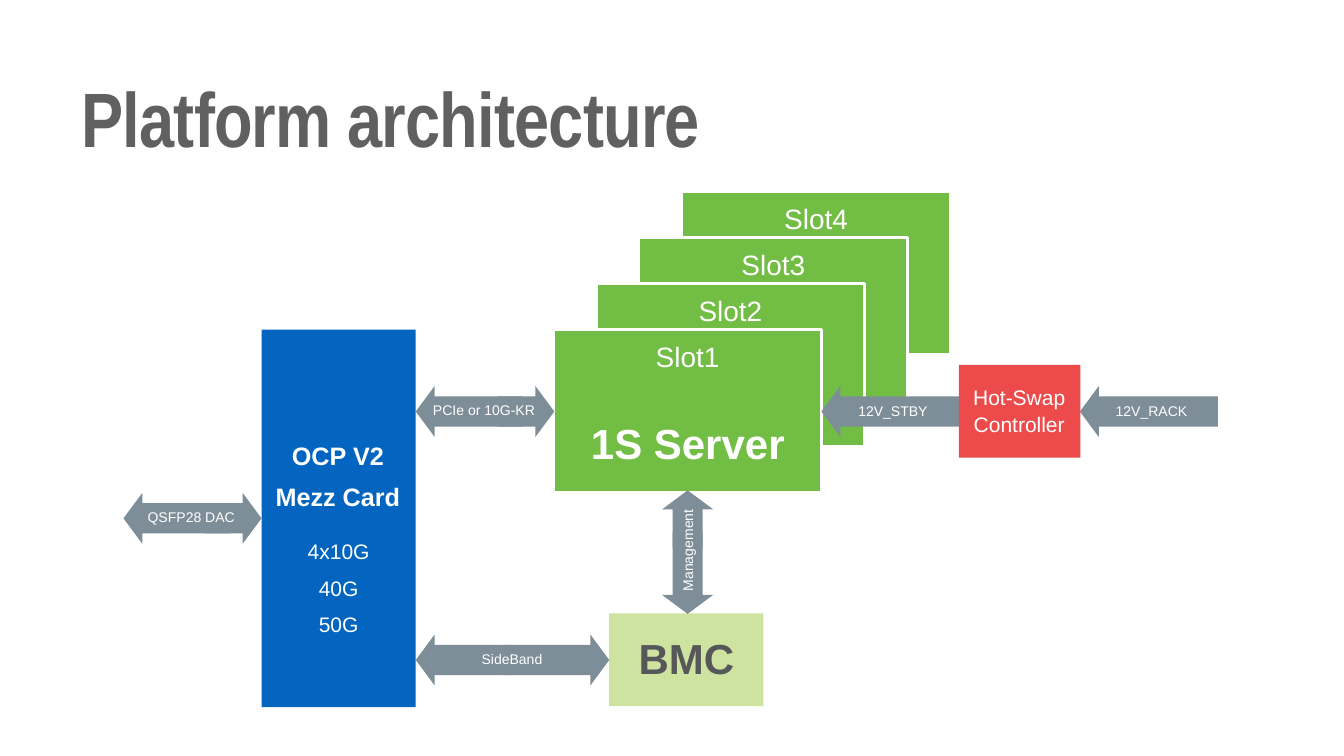
from pptx import Presentation
from pptx.dml.color import RGBColor
from pptx.enum.shapes import MSO_SHAPE as Kind
from pptx.enum.text import MSO_ANCHOR as Anchor, PP_ALIGN as Align
from pptx.util import Inches, Pt

WHITE = RGBColor(0xFF, 0xFF, 0xFF)
DARK = RGBColor(0x60, 0x60, 0x60)
INK = RGBColor(0x55, 0x57, 0x59)
LIME = RGBColor(0xCF, 0xE3, 0xA0)
BLUE = RGBColor(0x03, 0x65, 0xC0)
GREEN = RGBColor(0x72, 0xBD, 0x44)
STEEL = RGBColor(0x7D, 0x8E, 0x98)
RED = RGBColor(0xED, 0x4B, 0x4B)


def add_title(slide, text):
    """Fill and place the title placeholder."""
    title = slide.shapes.title
    title.left, title.top = Inches(1.62), Inches(0.08)
    title.width, title.height = Inches(24.34), Inches(3.16)
    frame = title.text_frame
    frame.text = text
    frame.word_wrap = True
    frame.vertical_anchor = Anchor.BOTTOM
    frame.margin_left = frame.margin_right = 0
    frame.margin_top = frame.margin_bottom = 0
    para = frame.paragraphs[0]
    para.alignment = Align.LEFT
    para.space_after = Pt(6)
    run = para.runs[0]
    run.font.name = "Arial Narrow"
    run.font.size = Pt(110)
    run.font.bold = True
    run.font.color.rgb = DARK
    run._r.get_or_add_rPr().set("spc", "-120")


def add_block(slide, box, fill, kind=Kind.RECTANGLE, edge=None):
    """Add a filled shape, outlined only if an edge colour is given."""
    block = slide.shapes.add_shape(kind, *map(Inches, box))
    block.shadow.inherit = False
    block.fill.solid()
    block.fill.fore_color.rgb = fill
    if edge is None:
        block.line.fill.background()
    else:
        block.line.color.rgb = edge
        block.line.width = Pt(4)
    return block


def add_label(slide, box, text, size, bold=False, color=WHITE, gap=20,
              anchor=Anchor.MIDDLE, turn=0):
    """Add a centred text box with one paragraph per line."""
    label = slide.shapes.add_textbox(*map(Inches, box))
    label.rotation = turn
    frame = label.text_frame
    frame.text = text
    frame.word_wrap = True
    frame.vertical_anchor = anchor
    frame.margin_left = frame.margin_right = Inches(0.08)
    frame.margin_top = frame.margin_bottom = Inches(0.08)
    for i, para in enumerate(frame.paragraphs):
        para.alignment = Align.CENTER
        para.line_spacing = 0.9
        para.space_before = Pt(gap if i else 0)
        for run in para.runs:
            run.font.name = "Arial"
            run.font.size = Pt(size)
            run.font.bold = bold
            run.font.color.rgb = color


def add_arrow(slide, kind, left, top, width, turn=0):
    """Add one bus arrow."""
    arrow = add_block(slide, (left, top, width, 1.01), STEEL, kind)
    arrow.adjustments[0] = 0.593
    arrow.adjustments[1] = 0.371
    arrow.rotation = turn


def add_bus(slide, text, box, right, left, turn=0):
    """Add a labelled bus with a left head and an optional right head."""
    if right:
        add_arrow(slide, Kind.RIGHT_ARROW, *right, turn)
    add_arrow(slide, Kind.LEFT_ARROW, *left, turn)
    add_label(slide, (*box, 0.44), text, 20, turn=turn)


def add_slots(slide):
    """Stack the server slots from back to front."""
    for i in range(3, -1, -1):
        x, y = 10.98 + 0.85 * i, 6.54 - 0.91 * i
        add_block(slide, (x, y, 5.33, 3.23), GREEN, edge=WHITE)
        add_label(slide, (x + 0.85, y + 0.21, 3.63, 0.71), f"Slot{i + 1}", 40)
    add_label(slide, (11.15, 8.36, 5, 0.96), "1S Server", 60, True)


def add_card(slide):
    """Add the network card with its speeds."""
    add_block(slide, (5.19, 6.54, 3.06, 7.49), BLUE)
    add_label(slide, (5.18, 8.8, 3.05, 1.37), "OCP V2\nMezz Card", 36, True)
    add_label(slide, (5.98, 10.66, 1.48, 1.88), "4x10G\n40G\n50G", 30,
              anchor=Anchor.TOP)


def main():
    """Build the slide and save it."""
    deck = Presentation()
    deck.slide_width, deck.slide_height = Inches(26.67), Inches(15)
    slide = deck.slides.add_slide(deck.slide_layouts[5])
    add_title(slide, "Platform architecture")
    add_block(slide, (12.09, 12.17, 3.06, 1.84), LIME)
    add_label(slide, (12.12, 12.63, 3, 0.96), "BMC", 60, True, INK)
    add_card(slide)
    add_slots(slide)
    buses = [
        ("SideBand", (8.59, 12.88, 3.14),
         (9.97, 12.59, 2.12), (8.25, 12.59, 1.89)),
        ("QSFP28 DAC", (2.49, 10.06, 2.61),
         (4.06, 9.78, 1.13), (2.45, 9.78, 2.12)),
        ("12V_STBY", (16.35, 7.96, 2.74), None, (16.3, 7.66, 2.74)),
        ("PCIe or 10G-KR", (8.3, 7.94, 2.61),
         (9.87, 7.66, 1.13), (8.25, 7.66, 2.12)),
        ("Management", (12.36, 10.7, 2.61),
         (13.08, 9.79, 1.13), (12.84, 10.87, 1.61), 270),
        ("12V_RACK", (21.48, 7.96, 2.74), None, (21.43, 7.66, 2.74)),
    ]
    for bus in buses:
        add_bus(slide, *bus)
    add_block(slide, (19.03, 7.24, 2.41, 1.84), RED)
    add_label(slide, (19.15, 7.66, 2.15, 1.03), "Hot-Swap\nController", 30,
              gap=6)
    deck.save("out.pptx")


if __name__ == "__main__":
    main()
